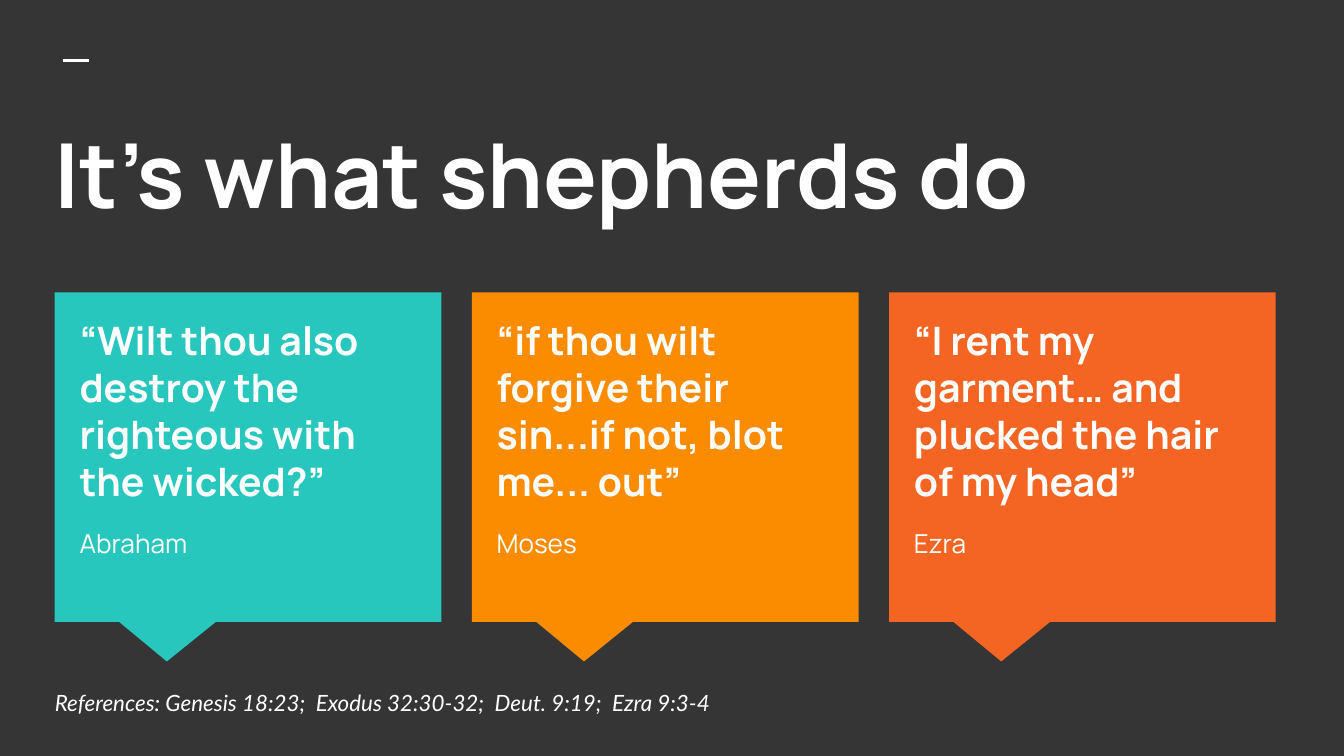
import pptx
import pptx.util
import pptx.dml.color
import pptx.enum.shapes
import pptx.enum.text
import pptx.oxml.ns
import lxml.etree
from dataclasses import dataclass

WIDE = pptx.util.Inches(10)
HIGH = WIDE * 9 // 16


@dataclass(frozen=True)
class Theme:
    back: str = "353535"
    ink: str = "FFFFFF"
    fills: tuple = ("27C7BD", "FB8C00", "F46524")
    head: str = "Manrope"
    body: str = "Lato"
    title: int = 48
    quote: int = 21
    name: int = 14
    note: int = 12


THEME = Theme()
CARDS = (
    ("“Wilt thou also destroy the righteous with the wicked?”", "Abraham"),
    ("“if thou wilt forgive their sin...if not, blot me... out”", "Moses"),
    ("“I rent my garment… and plucked the hair of my head”", "Ezra"),
)


def color(code):
    return pptx.dml.color.RGBColor.from_string(code)


def part(box, left, top, width, height):
    """Box inside a box, in percent of the outer one."""
    x, y, w, h = box
    return (round(x + w * left / 100), round(y + h * top / 100),
            round(w * width / 100), round(h * height / 100))


def font(size, face=THEME.head, bold=False, italic=False):
    return {"size": pptx.util.Pt(size), "name": face,
            "bold": bold, "italic": italic}


def write(slide, box, lines, anchor="TOP", after=0):
    """Fill a text box with (text, font format) lines."""
    frame = slide.shapes.add_textbox(*box).text_frame
    style = {"word_wrap": True,
             "vertical_anchor": getattr(pptx.enum.text.MSO_ANCHOR, anchor)}
    for side in ("left", "right", "top", "bottom"):
        style["margin_" + side] = pptx.util.Inches(0.1)
    for key, value in style.items():
        setattr(frame, key, value)
    for index, (text, look) in enumerate(lines):
        para = frame.add_paragraph() if index else frame.paragraphs[0]
        para.space_after = pptx.util.Pt(after)
        run = para.add_run()
        run.text = text
        run.font.color.rgb = color(THEME.ink)
        for key, value in look.items():
            setattr(run.font, key, value)


def header(slide, box):
    """Short dash above the slide title."""
    x, y, width, _ = part(box, 1.65, 4, 2.12, 0)
    dash = slide.shapes.add_connector(
        pptx.enum.shapes.MSO_CONNECTOR.STRAIGHT, x, y, x + width, y)
    dash.line.color.rgb = color(THEME.ink)
    dash.line.width = pptx.util.Pt(1.5)
    lxml.etree.SubElement(dash._element.spPr,
                          pptx.oxml.ns.qn("a:effectLst"))
    write(slide, part(box, 0, 26, 100, 74),
          [("It’s what shepherds do", font(THEME.title, bold=True))])


def card(slide, box, fill, quote, name):
    """Speech callout with a quote and its speaker."""
    shape = slide.shapes.add_shape(
        pptx.enum.shapes.MSO_SHAPE.RECTANGULAR_CALLOUT, *box)
    shape.shadow.inherit = False
    shape.fill.solid()
    shape.fill.fore_color.rgb = color(fill)
    shape.line.fill.background()
    # Tail tip, as shares of the callout from its centre
    shape.adjustments[0] = -0.21
    shape.adjustments[1] = 0.62
    write(slide, part(box, 3, 3.3, 94, 89),
          [(quote, font(THEME.quote, bold=True)),
           (name, font(THEME.name))], after=12)


def cards(slide, box):
    """Equal columns of callouts across the box."""
    gap = 2.5
    wide = (100 - gap * (len(CARDS) - 1)) / len(CARDS)
    for index, (fill, (quote, name)) in enumerate(zip(THEME.fills, CARDS)):
        card(slide, part(box, index * (wide + gap), 0, wide, 100),
             fill, quote, name)


def footer(slide, box):
    """Scripture references."""
    text = "References: Genesis 18:23;  Exodus 32:30-32;  Deut. 9:19;  Ezra 9:3-4"
    write(slide, box, [(text, font(THEME.note, THEME.body, italic=True))],
          anchor="MIDDLE")


def main():
    deck = pptx.Presentation()
    deck.slide_width, deck.slide_height = WIDE, HIGH
    slide = deck.slides.add_slide(deck.slide_layouts[6])
    slide.background.fill.solid()
    slide.background.fill.fore_color.rgb = color(THEME.back)
    page = (0, 0, WIDE, HIGH)
    header(slide, part(page, 3.1, 6.93, 94.3, 26.84))
    cards(slide, part(page, 4.07, 38.67, 90.85, 43.6))
    footer(slide, part(page, 3.1, 90.49, 68.3, 4.98))
    deck.save("out.pptx")


if __name__ == "__main__":
    main()
